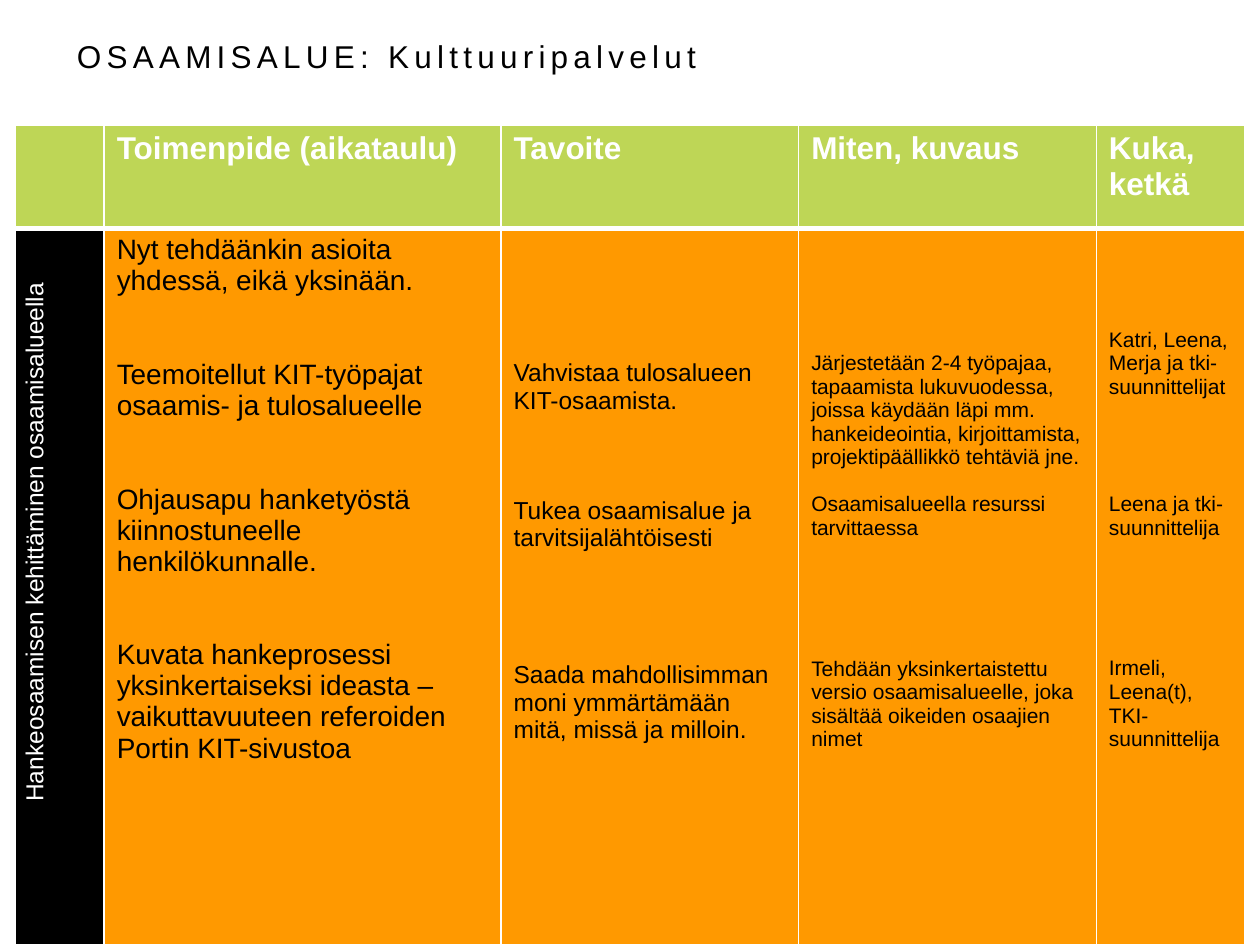
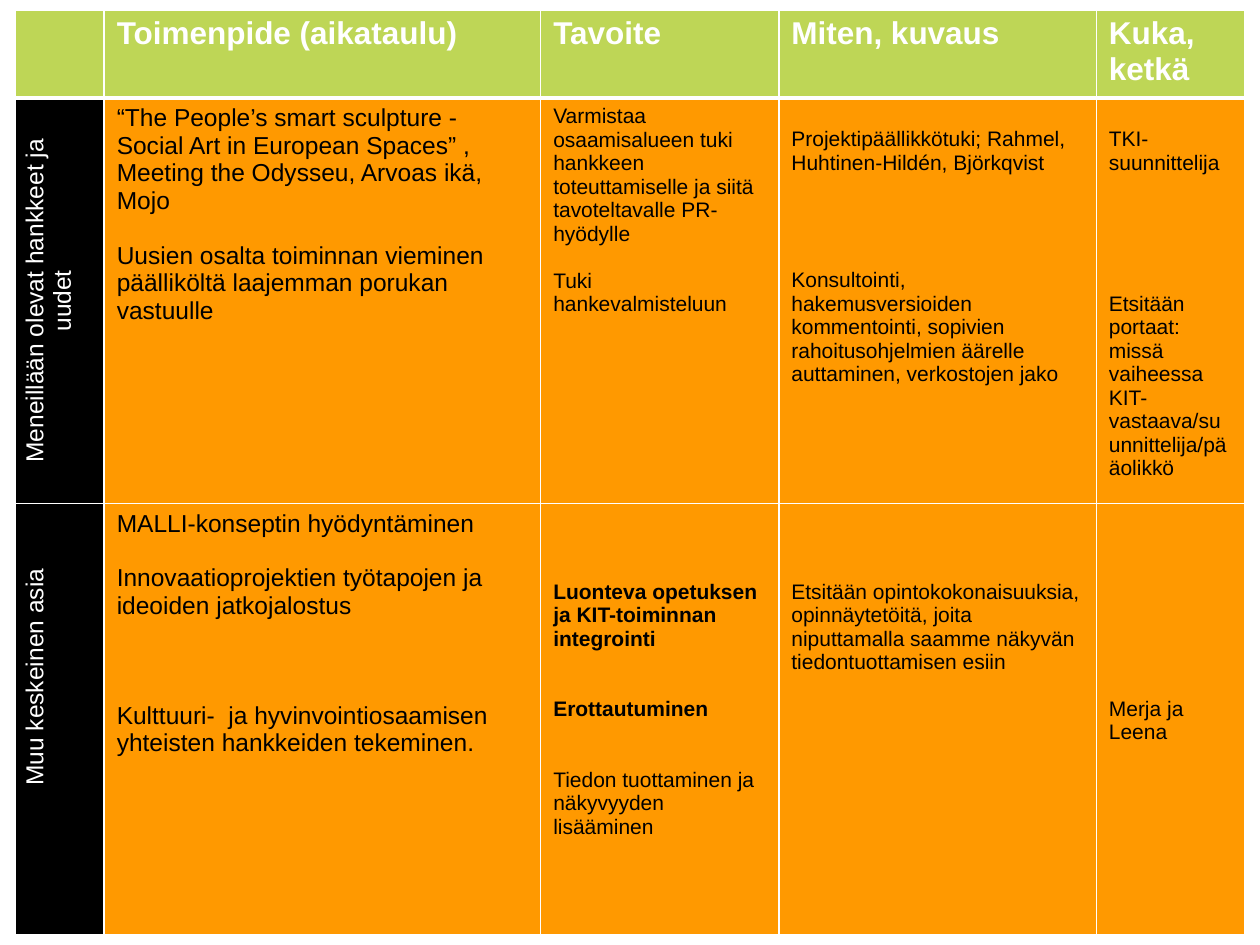
import dataclasses

import lxml.etree
import pptx
import pptx.dml.color
import pptx.enum.text
import pptx.oxml.ns
import pptx.util

Cm = pptx.util.Cm
Pt = pptx.util.Pt


@dataclasses.dataclass(frozen=True)
class Theme:
    """Colours, type sizes and line widths shared by the pages."""

    font: str = "Arial"
    ink: str = "000000"
    paper: str = "FFFFFF"
    header: str = "BED656"
    body: str = "FF9900"
    title_size: int = 18
    large: int = 16
    medium: int = 14
    small: int = 12
    line_height: float = 1.117
    thin: int = 1
    thick: int = 3


THEME = Theme()
HEADINGS = ("", "Toimenpide (aikataulu)", "Tavoite", "Miten, kuvaus", "Kuka, ketkä")


@dataclasses.dataclass(frozen=True)
class Entry:
    """One paragraph, with the number of empty lines above it."""

    text: str
    gap: float = 0
    bold: bool = False


@dataclasses.dataclass(frozen=True)
class Label:
    """An upright row label, with its indent in points."""

    text: str
    indent: float = 0
    centred: bool = True


@dataclasses.dataclass(frozen=True)
class Plan:
    """One page's table: its place, sizes in cm and contents."""

    top: float
    widths: tuple
    heights: tuple
    sizes: tuple
    rows: tuple
    title: str = ""


PLANS = (
    Plan(
        title="OSAAMISALUE: Kulttuuripalvelut",
        top=2.52,
        widths=(1.8, 8, 6, 6, 3),
        heights=(2.08, 14.45),
        sizes=(THEME.large, THEME.medium, THEME.small, THEME.small),
        rows=(
            (
                Label("Hankeosaamisen kehittäminen osaamisalueella", 50.6),
                (
                    Entry("Nyt tehdäänkin asioita yhdessä, eikä yksinään."),
                    Entry("Teemoitellut KIT-työpajat osaamis- ja tulosalueelle", 2),
                    Entry("Ohjausapu hanketyöstä kiinnostuneelle henkilökunnalle.", 2),
                    Entry("Kuvata hankeprosessi yksinkertaiseksi ideasta – "
                          "vaikuttavuuteen referoiden Portin KIT-sivustoa", 2),
                ),
                (
                    Entry("Vahvistaa tulosalueen KIT-osaamista.", 4.57),
                    Entry("Tukea osaamisalue ja tarvitsijalähtöisesti", 3),
                    Entry("Saada mahdollisimman moni ymmärtämään "
                          "mitä, missä ja milloin.", 4),
                ),
                (
                    Entry("Järjestetään 2-4 työpajaa, tapaamista lukuvuodessa, joissa "
                          "käydään läpi mm. hankeideointia, kirjoittamista, "
                          "projektipäällikkö tehtäviä jne.", 5),
                    Entry("Osaamisalueella resurssi tarvittaessa", 1),
                    Entry("Tehdään yksinkertaistettu versio osaamisalueelle, "
                          "joka sisältää oikeiden osaajien nimet", 5),
                ),
                (
                    Entry("Katri, Leena, Merja ja tki-suunnittelijat", 4),
                    Entry("Leena ja tki-suunnittelija", 4),
                    Entry("Irmeli, Leena(t), TKI-suunnittelija", 5),
                ),
            ),
        ),
    ),
    Plan(
        top=0.2,
        widths=(1.8, 8.8, 4.8, 6.4, 3),
        heights=(1.68, 8.15, 8.69),
        sizes=(THEME.medium, THEME.small, THEME.small, THEME.small),
        rows=(
            (
                Label("Meneillään olevat hankkeet ja uudet"),
                (
                    Entry("“The People’s smart sculpture - Social Art in European "
                          "Spaces” , Meeting the Odysseu, Arvoas ikä, Mojo"),
                    Entry("Uusien osalta toiminnan vieminen päälliköltä "
                          "laajemman porukan vastuulle", 1),
                ),
                (
                    Entry("Varmistaa osaamisalueen tuki hankkeen toteuttamiselle "
                          "ja siitä tavoteltavalle PR-hyödylle"),
                    Entry("Tuki hankevalmisteluun", 1),
                ),
                (
                    Entry("Projektipäällikkötuki; Rahmel, Huhtinen-Hildén, Björkqvist", 1),
                    Entry("Konsultointi, hakemusversioiden kommentointi, sopivien "
                          "rahoitusohjelmien äärelle auttaminen, verkostojen jako", 4),
                ),
                (
                    Entry("TKI-suunnittelija", 1),
                    Entry("Etsitään portaat: missä vaiheessa "
                          "KIT-vastaava/suunnittelija/pääolikkö", 5),
                ),
            ),
            (
                Label("Muu keskeinen asia", 77.8, centred=False),
                (
                    Entry("MALLI-konseptin hyödyntäminen"),
                    Entry("Innovaatioprojektien työtapojen ja ideoiden jatkojalostus", 1),
                    Entry("Kulttuuri-  ja hyvinvointiosaamisen yhteisten "
                          "hankkeiden tekeminen.", 3),
                ),
                (
                    Entry("Luonteva opetuksen ja KIT-toiminnan integrointi", 3, True),
                    Entry("Erottautuminen", 2, True),
                    Entry("Tiedon tuottaminen ja näkyvyyden lisääminen", 2),
                ),
                (
                    Entry("Etsitään opintokokonaisuuksia, opinnäytetöitä, joita "
                          "niputtamalla saamme näkyvän tiedontuottamisen esiin", 3),
                ),
                (Entry("Merja ja Leena", 8),),
            ),
        ),
    ),
)


def colour(code):
    """Return the RGB colour for a hex code."""
    return pptx.dml.color.RGBColor.from_string(code)


def add_span(para, text, size, ink, bold=False):
    """Add one styled run to a paragraph and return it."""
    span = para.add_run()
    span.text = text
    span.font.name = THEME.font
    span.font.size = Pt(size)
    span.font.bold = bold
    span.font.color.rgb = colour(ink)
    return span


def style_cell(cell, fill, top=THEME.thin, bottom=THEME.thin):
    """Fill a cell and draw its four borders."""
    cell.fill.solid()
    cell.fill.fore_color.rgb = colour(fill)
    properties = cell._tc.get_or_add_tcPr()
    qn = pptx.oxml.ns.qn
    edges = (("L", THEME.thin), ("R", THEME.thin), ("T", top), ("B", bottom))
    for place, (side, width) in enumerate(edges):
        line = lxml.etree.Element(qn(f"a:ln{side}"), w=str(Pt(width)))
        solid = lxml.etree.SubElement(line, qn("a:solidFill"))
        lxml.etree.SubElement(solid, qn("a:srgbClr"), val=THEME.paper)
        properties.insert(place, line)


def fill_label(cell, label):
    """Write an upright row label into a cell."""
    cell._tc.get_or_add_tcPr().set("vert", "vert270")
    para = cell.text_frame.paragraphs[0]
    align = pptx.enum.text.PP_ALIGN
    para.alignment = align.CENTER if label.centred else align.LEFT
    para._p.get_or_add_pPr().set("marL", str(Pt(label.indent)))
    add_span(para, label.text, THEME.medium, THEME.paper)


def fill_entries(cell, entries, size):
    """Write spaced paragraphs into a cell, the first gap as its top margin."""
    frame = cell.text_frame
    for number, entry in enumerate(entries):
        gap = Pt(round(entry.gap * size * THEME.line_height, 1))
        if number:
            para = frame.add_paragraph()
            para.space_before = gap
        else:
            para = frame.paragraphs[0]
            cell.margin_top = cell.margin_top + gap
        add_span(para, entry.text, size, THEME.ink, entry.bold)


def add_title(page, text, left, top, width, height):
    """Add the letter-spaced page title."""
    box = page.shapes.add_textbox(Cm(left), Cm(top), Cm(width), Cm(height))
    frame = box.text_frame
    frame.word_wrap = True
    frame.vertical_anchor = pptx.enum.text.MSO_ANCHOR.MIDDLE
    span = add_span(frame.paragraphs[0], text, THEME.title_size, THEME.ink)
    span._r.get_or_add_rPr().set("spc", "300")


def add_action_table(page, plan, left):
    """Add the table of actions, goals, methods and people."""
    shape = page.shapes.add_table(
        len(plan.heights), len(plan.widths), Cm(left), Cm(plan.top),
        Cm(sum(plan.widths)), Cm(sum(plan.heights)))
    table = shape.table
    table.horz_banding = False
    for column, width in zip(table.columns, plan.widths):
        column.width = Cm(width)
    for row, height in zip(table.rows, plan.heights):
        row.height = Cm(height)
    for cell, heading in zip(table.rows[0].cells, HEADINGS):
        style_cell(cell, THEME.header, bottom=THEME.thick)
        if heading:
            add_span(cell.text_frame.paragraphs[0], heading,
                     THEME.title_size, THEME.paper, True)
    for number, (label, *columns) in enumerate(plan.rows, 1):
        label_cell, *cells = table.rows[number].cells
        top = THEME.thick if number == 1 else THEME.thin
        style_cell(label_cell, THEME.ink, top)
        fill_label(label_cell, label)
        for cell, entries, size in zip(cells, columns, plan.sizes):
            style_cell(cell, THEME.body, top)
            fill_entries(cell, entries, size)


def main():
    """Build the deck and save it."""
    deck = pptx.Presentation()
    deck.slide_width, deck.slide_height = Cm(25.4), Cm(19.05)
    for plan in PLANS:
        page = deck.slides.add_slide(deck.slide_layouts[6])
        add_action_table(page, plan, left=0.3)
        if plan.title:
            add_title(page, plan.title, 1.3, 0.74, 22.86, 0.76)
    deck.save("out.pptx")


if __name__ == "__main__":
    main()
